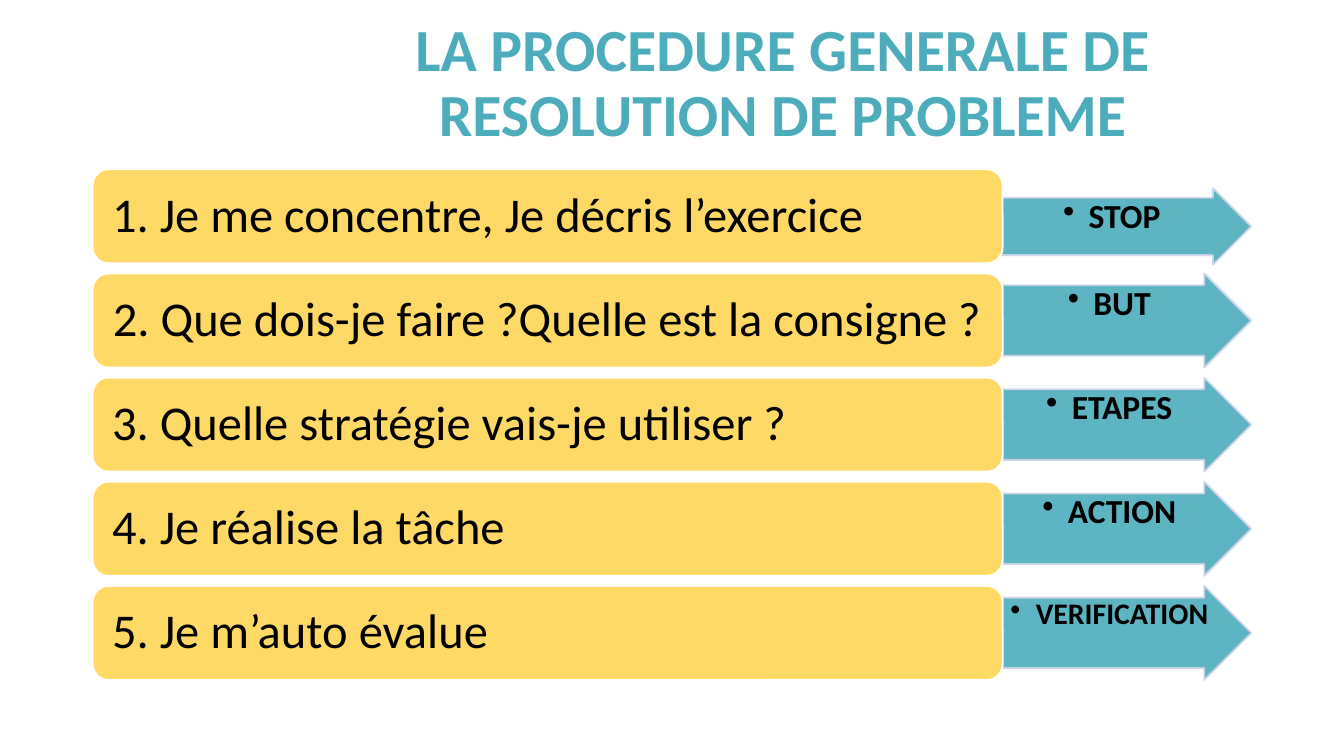
from dataclasses import dataclass

from lxml.etree import SubElement
from pptx import Presentation
from pptx.dml.color import RGBColor as RGB
from pptx.enum.shapes import MSO_AUTO_SHAPE_TYPE as Shape
from pptx.enum.text import MSO_VERTICAL_ANCHOR as Anchor, PP_PARAGRAPH_ALIGNMENT as Align
from pptx.oxml.ns import qn
from pptx.util import Emu, Pt

SCALE = 4572
STEP_TOP, STEP_PITCH, STEP_HEIGHT = 252, 155, 140


@dataclass(frozen=True)
class Theme:
    """Colours and type sizes of the slide."""
    font: str = "Calibri"
    teal: RGB = RGB(0x4C, 0xAC, 0xBC)
    yellow: RGB = RGB(0xFF, 0xD9, 0x66)
    edge: RGB = RGB(0xCF, 0xD5, 0xEA)
    white: RGB = RGB(0xFF, 0xFF, 0xFF)
    black: RGB = RGB(0, 0, 0)
    title: int = 32
    step: int = 26
    label: int = 18
    small: int = 16


THEME = Theme()
STEPS = [
    ("1. Je me concentre, Je décris l’exercice", Align.LEFT, "STOP", THEME.label, (1490, 280, 372, 114)),
    ("2. Que dois-je faire ?Quelle est la consigne ?", Align.CENTER, "BUT", THEME.label, None),
    ("3. Quelle stratégie vais-je utiliser ?", Align.LEFT, "ETAPES", THEME.label, None),
    ("4. Je réalise la tâche", Align.LEFT, "ACTION", THEME.label, None),
    ("5. Je m’auto évalue", Align.LEFT, "VERIFICATION", THEME.small, None),
]


def px(*lengths):
    """Turn whole px into EMU lengths."""
    return [Emu(length * SCALE) for length in lengths]


def apply(target, values):
    """Set each attribute of the target from a dict."""
    for name, value in values.items():
        setattr(target, name, value)


def set_alpha(fill_parent, percent):
    """Make the solid fill below an element partly opaque."""
    color = fill_parent.find(qn("a:solidFill"))[0]
    SubElement(color, qn("a:alpha")).set("val", str(percent * 1000))


def add_bullet(para, indent):
    """Give a paragraph a round bullet with a hanging indent."""
    props = para._p.get_or_add_pPr()
    props.set("marL", str(indent * SCALE))
    props.set("indent", str(-indent * SCALE))
    SubElement(props, qn("a:buChar")).set("char", "•")


def write(box, text, align, anchor, margins, font, bullet=0):
    """Write one formatted paragraph into a box."""
    frame = box.text_frame
    across, down = px(*margins)
    apply(frame, dict(word_wrap=True, vertical_anchor=anchor, margin_left=across,
                      margin_right=across, margin_top=down, margin_bottom=down))
    para = frame.paragraphs[0]
    apply(para, dict(alignment=align, line_spacing=0.9))
    if bullet:
        add_bullet(para, bullet)
    span = para.add_run()
    span.text = text
    color, size, bold = font
    apply(span.font, dict(name=THEME.font, size=Pt(size), bold=bold))
    span.font.color.rgb = color


def add_block(page, kind, place, fill, line):
    """Add a filled and outlined preset shape."""
    block = page.shapes.add_shape(kind, *px(*place))
    block.shadow.inherit = False
    block.fill.solid()
    block.fill.fore_color.rgb = fill
    block.line.color.rgb = line
    block.line.width = Pt(1)
    return block


def add_title(page, text):
    """Add the slide title."""
    box = page.shapes.add_textbox(*px(448, 24, 1434, 204))
    write(box, text, Align.CENTER, Anchor.MIDDLE, (20, 10), (THEME.teal, THEME.title, True))


def add_arrow(page, place, label, size):
    """Add a translucent arrow that names the step."""
    arrow = add_block(page, Shape.RIGHT_ARROW, place, THEME.teal, THEME.edge)
    arrow.adjustments[0] = 0.75
    props = arrow._element.spPr
    for parent in (props, props.find(qn("a:ln"))):
        set_alpha(parent, 90)
    write(arrow, label, Align.CENTER, Anchor.TOP, (2, 2), (THEME.black, size, True), bullet=38)


def add_step(page, top, text, align):
    """Add the rounded box that describes the step."""
    box = add_block(page, Shape.ROUNDED_RECTANGLE, (138, top, 1354, STEP_HEIGHT), THEME.yellow, THEME.white)
    write(box, text, align, Anchor.MIDDLE, (22, 10), (THEME.black, THEME.step, False))


def main():
    """Build and save the slide."""
    deck = Presentation()
    deck.slide_width, deck.slide_height = px(2000, 1125)
    page = deck.slides.add_slide(deck.slide_layouts[6])
    add_title(page, "LA PROCEDURE GENERALE DE RESOLUTION DE PROBLEME")
    for index, (text, align, label, size, place) in enumerate(STEPS):
        top = STEP_TOP + index * STEP_PITCH
        add_arrow(page, place or (1492, top, 370, STEP_HEIGHT), label, size)
        add_step(page, top, text, align)
    deck.save("out.pptx")


if __name__ == "__main__":
    main()
